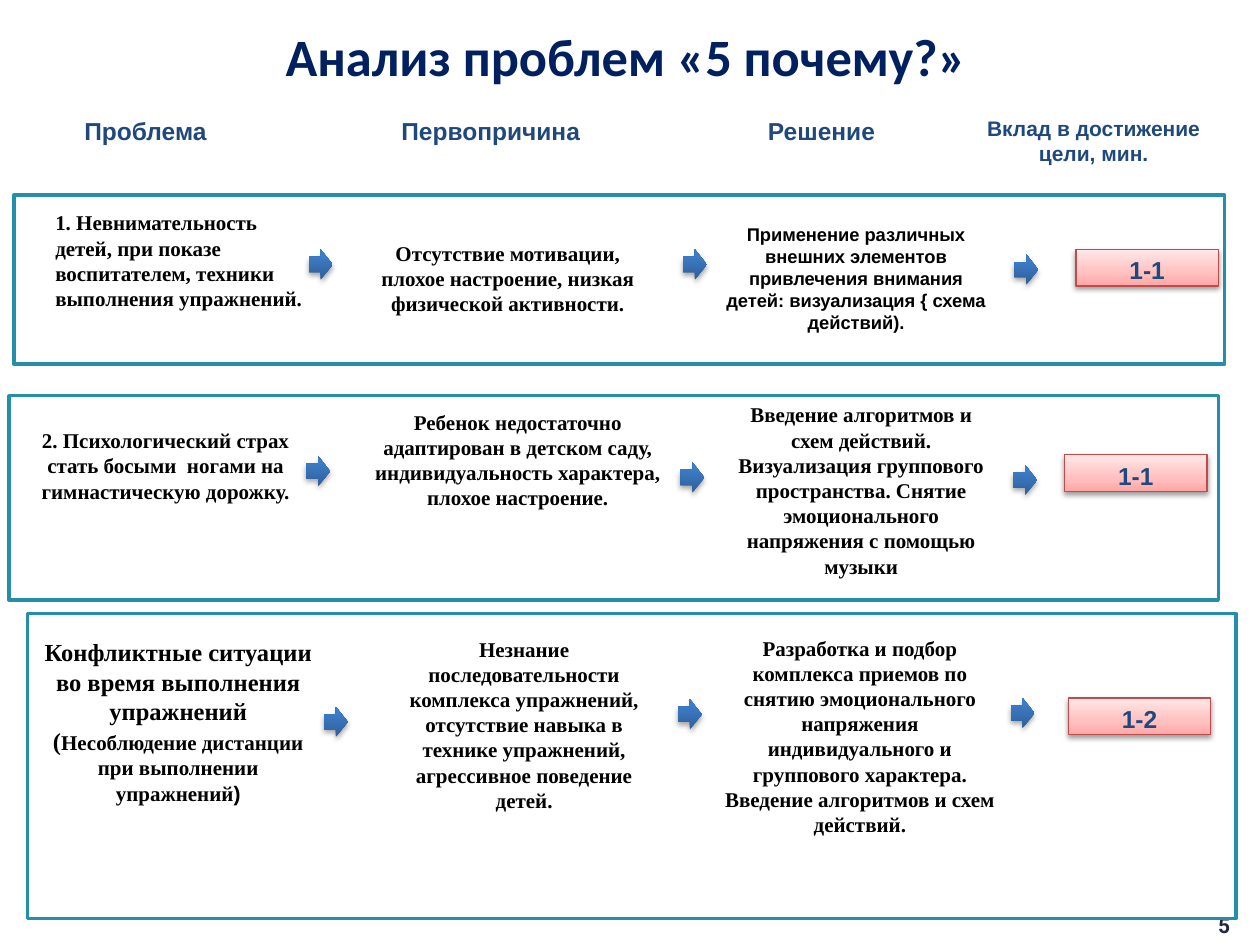
from dataclasses import dataclass

from lxml import etree
from pptx import Presentation
from pptx.dml.color import RGBColor
from pptx.enum.shapes import MSO_SHAPE
from pptx.enum.text import MSO_ANCHOR, MSO_AUTO_SIZE, PP_ALIGN
from pptx.oxml import parse_xml
from pptx.oxml.ns import nsdecls, qn
from pptx.util import Inches, Pt

RECT, ARROW = MSO_SHAPE.RECTANGLE, MSO_SHAPE.RIGHT_ARROW
LEFT, CENTER = PP_ALIGN.LEFT, PP_ALIGN.CENTER
TOP, MIDDLE = MSO_ANCHOR.TOP, MSO_ANCHOR.MIDDLE
GROW, FIXED = MSO_AUTO_SIZE.SHAPE_TO_FIT_TEXT, MSO_AUTO_SIZE.NONE

COLUMNS, ROWS = 100, 75
PLAIN = (0.1, 0.05, 0.1, 0.05)
HEADER = (0.1, 0.05, 0.1, 0.01)
CELL = (0.1, 0.09, 0.1, 0.01)


@dataclass(frozen=True)
class Theme:
    title = ("Calibri", 30, "002060")
    heading = ("Arial", 14, "1F497D")
    small_heading = ("Arial", 12, "1F497D")
    body = ("Times New Roman", 12, "000000")
    large_body = ("Times New Roman", 14, "000000")
    sans_body = ("Arial", 12, "000000")
    small_sans = ("Arial", 10.5, "000000")
    number = ("Roboto", 12, "23263C")
    frame = "248FA8"
    badge_line = "BF4C48"
    badge_fill = ((0, "FFA6A5"), (35, "FFC0BF"), (100, "FFE7E7"))
    arrow_fill = ((0, "2F5F99"), (80, "3D7CC7"), (100, "3A7CCB"))


THEME = Theme()

HEADERS = [
    ((2.4, 8.7, 18.3, 3), "Проблема", THEME.heading),
    ((29.8, 8.7, 18.3, 3), "Первопричина", THEME.heading),
    ((56.5, 8.7, 17.4, 3), "Решение", THEME.heading),
    ((76.9, 8.7, 19.8, 4.7), "Вклад в достижение цели, мин.", THEME.small_heading),
]

PROBLEMS = [
    {
        "frame": (1.1, 15.5, 96.1, 13.4),
        "arrows": [(24.5, 19.8), (54.2, 19.8), (80.5, 20.2)],
        "badge": ((85.4, 19.8), "1-1"),
        "cells": [
            ((3.4, 15.7, 22.1, 9.1), CELL, MIDDLE, LEFT, [
                ("1. Невнимательность детей, при показе воспитателем, техники "
                 "выполнения упражнений.", THEME.body)]),
            ((27.7, 18.1, 25.2, 7.1), CELL, MIDDLE, CENTER, [
                ("Отсутствие мотивации, плохое настроение, низкая физической "
                 "активности.", THEME.body)]),
            ((56.6, 16.7, 22.7, 9.9), CELL, MIDDLE, CENTER, [
                ("Применение различных внешних элементов привлечения внимания "
                 "детей: визуализация { схема действий).", THEME.small_sans)]),
        ],
    },
    {
        "frame": (0.7, 31.4, 96, 16.2),
        "arrows": [(24.3, 36.2), (54, 36.7), (80.4, 36.9)],
        "badge": ((84.5, 36.1), "1-1"),
        "cells": [
            ((2.1, 33, 22.1, 7.1), CELL, MIDDLE, CENTER, [
                ("2. Психологический страх стать босыми  ногами на "
                 "гимнастическую дорожку.", THEME.body)]),
            ((27.9, 32, 26.4, 9.1), PLAIN, TOP, CENTER, [
                ("Ребенок недостаточно адаптирован в детском саду, "
                 "индивидуальность характера, плохое настроение.", THEME.body)]),
            ((57.6, 31.4, 21.5, 17.2), PLAIN, TOP, CENTER, [
                ("Введение алгоритмов и схем действий. Визуализация группового "
                 "пространства. Снятие эмоционального напряжения с помощью "
                 "музыки", THEME.body)]),
        ],
    },
    {
        "frame": (2.2, 48.7, 95.9, 24.2),
        "arrows": [(25.7, 56.1), (53.8, 55.5), (80.2, 55.4)],
        "badge": ((84.8, 55.4), "1-2"),
        "cells": [
            ((2.1, 49.6, 24.1, 14.5), CELL, MIDDLE, CENTER, [
                ("Конфликтные ситуации во время выполнения упражнений (",
                 THEME.large_body),
                ("Несоблюдение дистанции при выполнении упражнений", THEME.body),
                (")", THEME.sans_body)]),
            ((30, 50, 23.2, 15.1), PLAIN, TOP, CENTER, [
                ("Незнание последовательности комплекса упражнений, отсутствие "
                 "навыка в технике упражнений, агрессивное поведение детей.",
                 THEME.body)]),
            ((56.2, 49.4, 24.1, 17.2), CELL, MIDDLE, CENTER, [
                ("Разработка и подбор комплекса приемов по снятию "
                 "эмоционального напряжения индивидуального и группового "
                 "характера. Введение алгоритмов и схем действий.", THEME.body)]),
        ],
    },
]


def grid(prs, box):
    x, y, w, h = box
    column, row = prs.slide_width / COLUMNS, prs.slide_height / ROWS
    return int(x * column), int(y * row), int(w * column), int(h * row)


def write(s, runs, insets, anchor, align, autosize):
    tf = s.text_frame
    tf.word_wrap = True
    tf.auto_size = autosize
    tf.vertical_anchor = anchor
    tf.margin_left, tf.margin_top, tf.margin_right, tf.margin_bottom = map(Inches, insets)
    p = tf.paragraphs[0]
    p.alignment = align
    for text, (font, size, color) in runs:
        r = p.add_run()
        r.text = text
        r.font.name, r.font.size, r.font.bold = font, Pt(size), True
        r.font.color.rgb = RGBColor.from_string(color)
    return p


def add_text(prs, slide, box, runs, insets=PLAIN, anchor=TOP, align=CENTER, autosize=GROW):
    s = slide.shapes.add_textbox(*grid(prs, box))
    write(s, runs, insets, anchor, align, autosize)


def add_box(prs, slide, kind, box, line=None, width=1):
    s = slide.shapes.add_shape(kind, *grid(prs, box))
    s.shadow.inherit = False
    s.fill.background()
    if line:
        s.line.color.rgb = RGBColor.from_string(line)
        s.line.width = Pt(width)
    else:
        s.line.fill.background()
    return s


def add_glow(s, stops, alpha, distance):
    props = s._element.spPr
    colors = "".join(f'<a:gs pos="{pos * 1000}"><a:srgbClr val="{color}"/></a:gs>'
                     for pos, color in stops)
    gradient = parse_xml(f'<a:gradFill {nsdecls("a")} rotWithShape="1"><a:gsLst>{colors}</a:gsLst>'
                         '<a:lin ang="16200000" scaled="0"/></a:gradFill>')
    props.replace(props.find(qn("a:noFill")), gradient)
    shadow = etree.SubElement(props.find(qn("a:effectLst")), qn("a:outerShdw"),
                              blurRad=str(Pt(3.1)), dist=str(Pt(distance)),
                              dir="5400000", rotWithShape="0")
    color = etree.SubElement(shadow, qn("a:srgbClr"), val="000000")
    etree.SubElement(color, qn("a:alpha"), val=str(alpha * 1000))


def add_arrow(prs, slide, corner):
    s = add_box(prs, slide, ARROW, (*corner, 1.9, 2.4))
    add_glow(s, THEME.arrow_fill, 35, 1.8)


def add_badge(prs, slide, corner, text):
    s = add_box(prs, slide, RECT, (*corner, 11.3, 2.9), THEME.badge_line, 0.75)
    add_glow(s, THEME.badge_fill, 38, 1.6)
    p = write(s, [(text, THEME.heading)], CELL, MIDDLE, CENTER, GROW)
    p.line_spacing = 0.8


def add_problem(prs, slide, problem):
    add_box(prs, slide, RECT, problem["frame"], THEME.frame, 2)
    for box, insets, anchor, align, runs in problem["cells"]:
        add_text(prs, slide, box, runs, insets, anchor, align)
    for corner in problem["arrows"]:
        add_arrow(prs, slide, corner)
    add_badge(prs, slide, *problem["badge"])


def main():
    prs = Presentation()
    prs.slide_width, prs.slide_height = Inches(10), Inches(7.5)
    slide = prs.slides.add_slide(prs.slide_layouts[6])
    add_text(prs, slide, (94.7, 71.9, 4.9, 3.1), [("5", THEME.number)],
             anchor=MIDDLE, autosize=FIXED)
    add_text(prs, slide, (2.2, 2.1, 95, 4.6), [("Анализ проблем «5 почему?»", THEME.title)],
             anchor=MIDDLE, autosize=FIXED)
    for box, text, style in HEADERS:
        add_text(prs, slide, box, [(text, style)], HEADER)
    for problem in PROBLEMS:
        add_problem(prs, slide, problem)
    prs.save("out.pptx")


if __name__ == "__main__":
    main()
